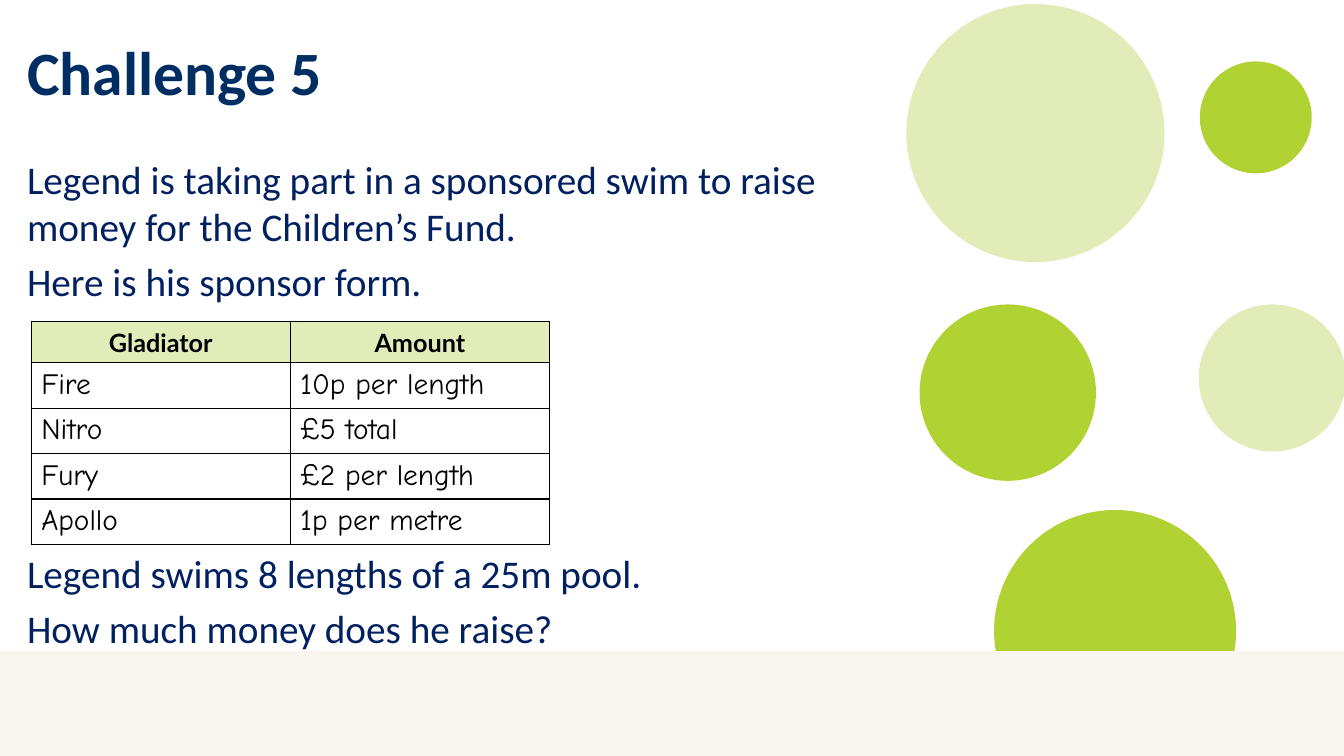
from lxml import etree
from pptx import Presentation
from pptx import util as u
from pptx.dml.color import RGBColor
from pptx.enum import shapes, text
from pptx.oxml.ns import qn

COLOURS = {
    "lime": "B0D233",
    "pale": "E2ECB8",
    "cream": "F9F6ED",
    "navy": "002060",
    "title": "002E63",
    "black": "000000",
}


def colour(name):
    return RGBColor.from_string(COLOURS[name])


def write(frame, lines, size=28, font="Calibri", ink="navy", bold=False,
          after=0, align=text.PP_ALIGN.LEFT):
    """Write one paragraph per line; a vertical tab breaks a line."""
    for index, line in enumerate(lines):
        para = frame.paragraphs[0] if index == 0 else frame.add_paragraph()
        para.text = line
        para.alignment = align
        para.space_after = u.Pt(after)
        for span in para.runs:
            span.font.size = u.Pt(size)
            span.font.name = font
            span.font.bold = bold
            span.font.color.rgb = colour(ink)


class ChallengePage:
    def __init__(self, deck):
        self.page = deck.slides.add_slide(deck.slide_layouts[6])

    def shape(self, kind, left, top, width, height, fill):
        shape = self.page.shapes.add_shape(
            kind, *map(u.Inches, (left, top, width, height)))
        shape.shadow.inherit = False
        shape.fill.solid()
        shape.fill.fore_color.rgb = colour(fill)
        shape.line.fill.background()

    def circle(self, left, top, size, fill):
        self.shape(shapes.MSO_SHAPE.OVAL, left, top, size, size, fill)

    def text(self, left, top, width, height, lines, **style):
        box = self.page.shapes.add_textbox(
            *map(u.Inches, (left, top, width, height)))
        box.text_frame.word_wrap = True
        write(box.text_frame, lines, **style)

    def table(self, left, top, widths, heights, rows):
        table = self.page.shapes.add_table(
            len(rows), len(widths),
            *map(u.Inches, (left, top, sum(widths), sum(heights)))).table
        table.horz_banding = False
        for column, width in zip(table.columns, widths):
            column.width = u.Inches(width)
        for number, (row, height, values) in enumerate(zip(table.rows, heights, rows)):
            row.height = u.Inches(height)
            for cell, value in zip(row.cells, values):
                self.border(cell)
                if number == 0:
                    cell.fill.solid()
                    cell.fill.fore_color.rgb = colour("pale")
                    cell.vertical_anchor = text.MSO_ANCHOR.MIDDLE
                    write(cell.text_frame, [value], size=18, font="Lato", ink="black",
                          bold=True, align=text.PP_ALIGN.CENTER)
                else:
                    cell.fill.background()
                    write(cell.text_frame, [value], size=21, font="Comic Neue",
                          ink="black")

    def border(self, cell):
        properties = cell._tc.get_or_add_tcPr()
        for side in ("lnL", "lnR", "lnT", "lnB"):
            line = etree.SubElement(properties, qn(f"a:{side}"), w=str(u.Pt(1)))
            fill = etree.SubElement(line, qn("a:solidFill"))
            etree.SubElement(fill, qn("a:srgbClr"), val=COLOURS["black"])


def main():
    deck = Presentation()
    deck.slide_width = u.Inches(13.33)
    deck.slide_height = u.Inches(7.5)
    challenge = ChallengePage(deck)

    # Circles and the band that covers the lowest one
    for circle in [
        (8.99, 0.04, 2.56, "pale"),
        (9.12, 3.02, 1.75, "lime"),
        (9.86, 5.06, 2.4, "lime"),
        (11.9, 0.61, 1.11, "lime"),
        (11.89, 3.02, 1.46, "pale"),
    ]:
        challenge.circle(*circle)
    challenge.shape(shapes.MSO_SHAPE.RECTANGLE, 0, 6.46, 13.33, 1.04, "cream")

    # Title and question
    challenge.text(0.17, 0.29, 3.66, 0.84, ["Challenge 5"],
                   size=44, ink="title", bold=True)
    challenge.text(0.17, 1.49, 8.7, 1.65, [
        "Legend is taking part in a sponsored swim to raise \v"
        "money for the Children’s Fund.",
        "Here is his sponsor form.",
    ], after=6)
    challenge.text(0.17, 5.4, 8.7, 1.16, [
        "Legend swims 8 lengths of a 25m pool.",
        "How much money does he raise?",
    ], after=6)

    # Sponsor form
    challenge.table(0.31, 3.19, [2.57] * 2, [0.41] + [0.45] * 4, [
        ("Gladiator", "Amount"),
        ("Fire", "10p per length"),
        ("Nitro", "£5 total"),
        ("Fury", "£2 per length"),
        ("Apollo", "1p per metre"),
    ])

    deck.save("out.pptx")


if __name__ == "__main__":
    main()
